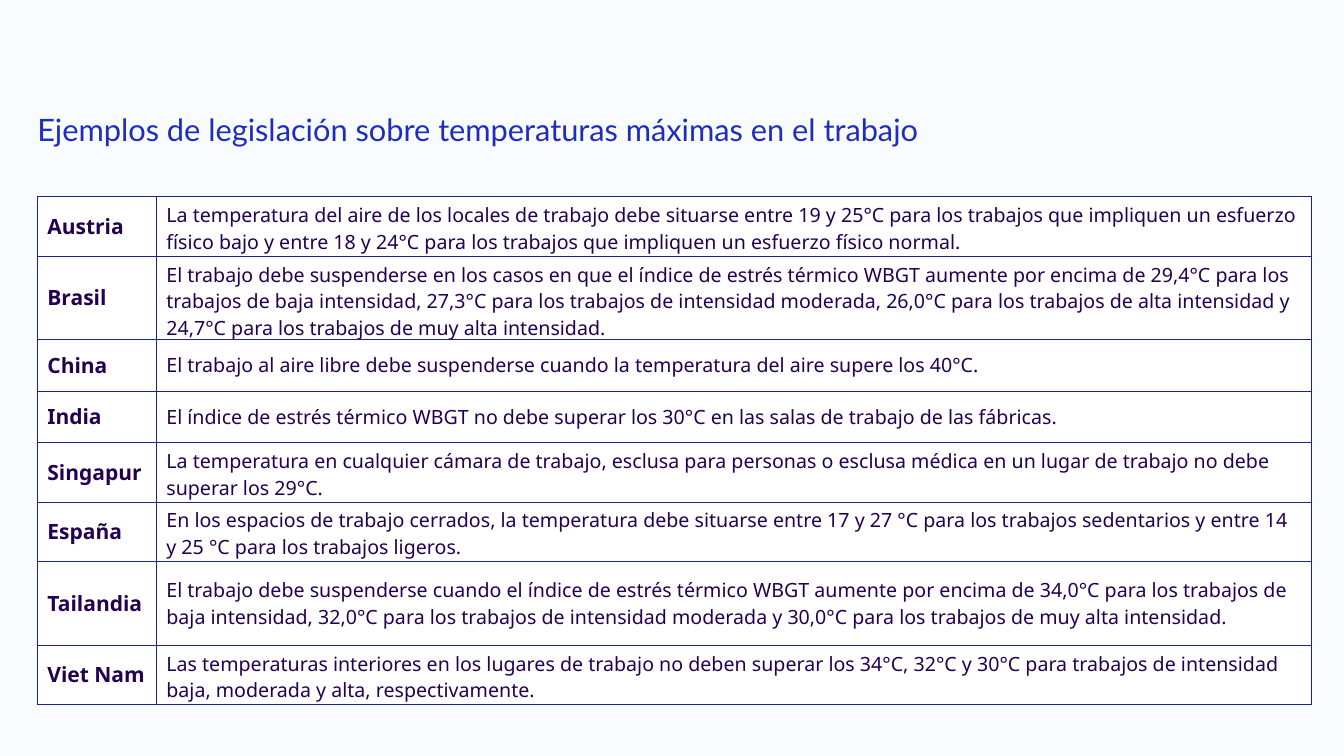
from lxml import etree
from pptx import Presentation
from pptx.dml.color import RGBColor
from pptx.enum.text import MSO_ANCHOR
from pptx.oxml.ns import qn
from pptx.util import Inches, Pt

MIDDLE = MSO_ANCHOR.MIDDLE
TOP = MSO_ANCHOR.TOP
PALE = RGBColor(0xF8, 0xFC, 0xFE)
WHITE = RGBColor(0xFF, 0xFF, 0xFF)
BLUE = RGBColor(0x1E, 0x2D, 0xBE)
NAVY = RGBColor(0x17, 0x22, 0x8E)
PURPLE = RGBColor(0x23, 0x00, 0x50)

TITLE = "Ejemplos de legislación sobre temperaturas máximas en el trabajo"
COLS = (1.18, 11.46)
LAWS = [
    (0.59, "Austria ", "La temperatura del aire de los locales de trabajo debe situarse entre 19 y 25°C para los trabajos que impliquen un esfuerzo físico bajo y entre 18 y 24°C para los trabajos que impliquen un esfuerzo físico normal."),
    (0.83, "Brasil ", "El trabajo debe suspenderse en los casos en que el índice de estrés térmico WBGT aumente por encima de 29,4°C para los trabajos de baja intensidad, 27,3°C para los trabajos de intensidad moderada, 26,0°C para los trabajos de alta intensidad y 24,7°C para los trabajos de muy alta intensidad."),
    (0.51, "China ", "El trabajo al aire libre debe suspenderse cuando la temperatura del aire supere los 40°C."),
    (0.51, "India ", "El índice de estrés térmico WBGT no debe superar los 30°C en las salas de trabajo de las fábricas."),
    (0.59, "Singapur ", "La temperatura en cualquier cámara de trabajo, esclusa para personas o esclusa médica en un lugar de trabajo no debe superar los 29°C."),
    (0.59, "España ", "En los espacios de trabajo cerrados, la temperatura debe situarse entre 17 y 27 °C para los trabajos sedentarios y entre 14 y 25 °C para los trabajos ligeros."),
    (0.83, "Tailandia ", "El trabajo debe suspenderse cuando el índice de estrés térmico WBGT aumente por encima de 34,0°C para los trabajos de baja intensidad, 32,0°C para los trabajos de intensidad moderada y 30,0°C para los trabajos de muy alta intensidad. "),
    (0.59, "Viet Nam", "Las temperaturas interiores en los lugares de trabajo no deben superar los 34°C, 32°C y 30°C para trabajos de intensidad baja, moderada y alta, respectivamente."),
]


class Deck:
    """Hold the slide and its style, and draw the title and the table."""

    def __init__(self):
        self.show = Presentation()
        self.show.slide_width = Inches(13.33)
        self.show.slide_height = Inches(7.5)
        self.slide = self.show.slides.add_slide(self.show.slide_layouts[6])
        back = self.slide.background.fill
        back.solid()
        back.fore_color.rgb = PALE

    def label(self, frame, text, size, face, color, bold=False):
        frame.text = text
        font = frame.paragraphs[0].runs[0].font
        font.size = Pt(size)
        font.name = face
        font.bold = bold
        font.color.rgb = color

    def title(self, text, left, top, width, height):
        box = self.slide.shapes.add_textbox(
            Inches(left), Inches(top), Inches(width), Inches(height))
        frame = box.text_frame
        frame.word_wrap = True
        frame.vertical_anchor = TOP
        frame.margin_left = frame.margin_right = 0
        frame.margin_top = frame.margin_bottom = 0
        self.label(frame, text, 22, "Lato", BLUE)
        frame.paragraphs[0].line_spacing = 0.9

    def border(self, cell):
        props = cell._tc.get_or_add_tcPr()
        for spot, side in enumerate(("lnL", "lnR", "lnT", "lnB")):
            line = etree.Element(qn(f"a:{side}"), w=str(Pt(0.5)))
            fill = etree.SubElement(line, qn("a:solidFill"))
            etree.SubElement(fill, qn("a:srgbClr"), val=str(NAVY))
            props.insert(spot, line)

    def cell(self, cell, text, size, bold):
        cell.vertical_anchor = MIDDLE
        cell.fill.solid()
        cell.fill.fore_color.rgb = WHITE
        self.label(cell.text_frame, text, size, "Noto Sans", PURPLE, bold)
        self.border(cell)

    def table(self, laws, cols, left, top):
        high = sum(law[0] for law in laws)
        table = self.slide.shapes.add_table(
            len(laws), len(cols), Inches(left), Inches(top),
            Inches(sum(cols)), Inches(high)).table
        table.first_row = table.horz_banding = False
        for col, width in zip(table.columns, cols):
            col.width = Inches(width)
        for row, (height, land, rule) in zip(table.rows, laws):
            row.height = Inches(height)
            self.cell(row.cells[0], land, 15, True)
            self.cell(row.cells[1], rule, 14, False)


def main():
    deck = Deck()
    deck.title(TITLE, 0.37, 1.14, 12.61, 0.51)
    deck.table(LAWS, COLS, 0.37, 1.95)
    deck.show.save("out.pptx")


if __name__ == "__main__":
    main()
